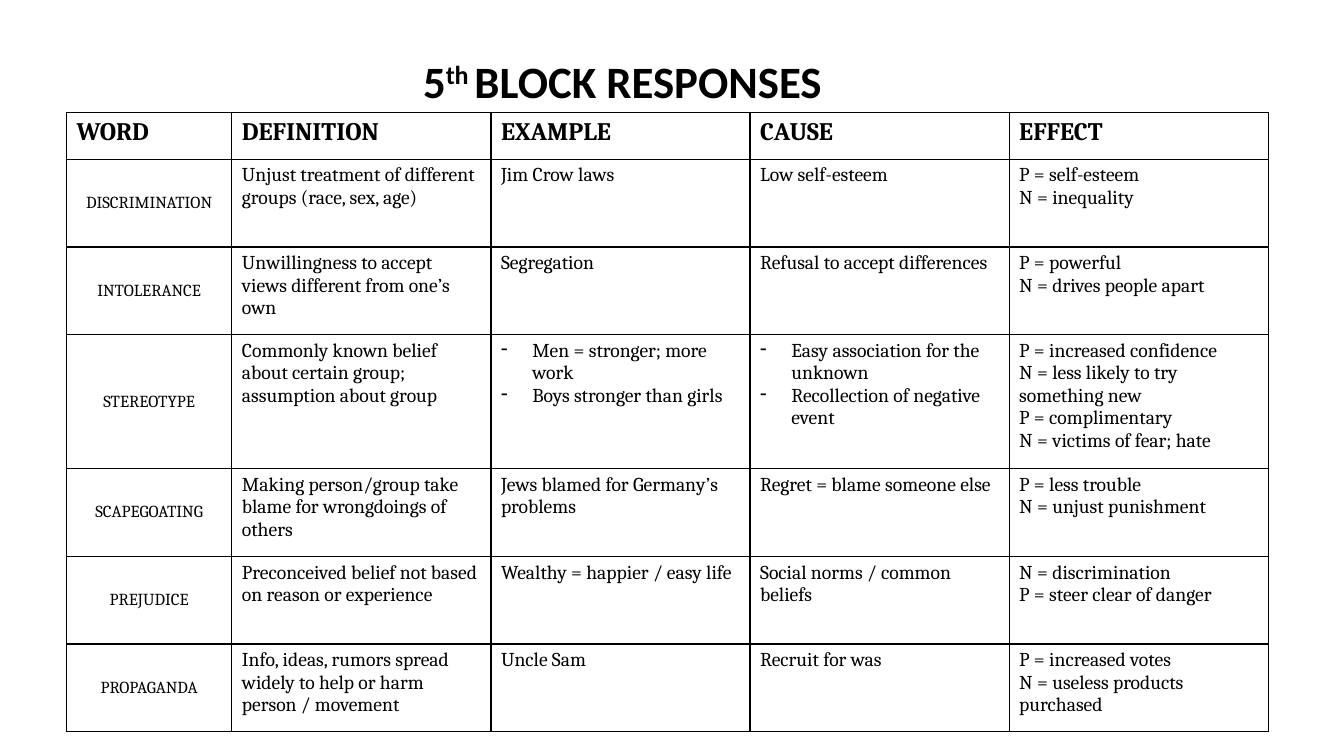
from lxml import etree
from pptx import Presentation, util as u
from pptx.dml.color import RGBColor
from pptx.enum import text
from pptx.oxml.ns import qn

TITLE = [("5", 0), ("th ", 30000), ("BLOCK RESPONSES", 0)]
HEADERS = ["WORD", "DEFINITION", "EXAMPLE", "CAUSE", "EFFECT"]
# Each line of a cell is a paragraph; a line starting with "- " is a bullet.
ROWS = [
    ["DISCRIMINATION", "Unjust treatment of different groups (race, sex, age)",
     "Jim Crow laws", "Low self-esteem", "P = self-esteem\nN = inequality"],
    ["INTOLERANCE", "Unwillingness to accept views different from one’s own",
     "Segregation", "Refusal to accept differences",
     "P = powerful\nN = drives people apart"],
    ["STEREOTYPE",
     "Commonly known belief about certain group; assumption about group",
     "- Men = stronger; more work\n- Boys stronger than girls",
     "- Easy association for the unknown\n- Recollection of negative event",
     "P = increased confidence\nN = less likely to try something new\n"
     "P = complimentary\nN = victims of fear; hate"],
    ["SCAPEGOATING", "Making person/group take blame for wrongdoings of others",
     "Jews blamed for Germany’s problems", "Regret = blame someone else",
     "P = less trouble\nN = unjust punishment"],
    ["PREJUDICE", "Preconceived belief not based on reason or experience",
     "Wealthy = happier / easy life", "Social norms / common beliefs",
     "N = discrimination\nP = steer clear of danger"],
    ["PROPAGANDA",
     "Info, ideas, rumors spread widely to help or harm person / movement",
     "Uncle Sam", "Recruit for was",
     "P = increased votes\nN = useless products purchased"],
]

BLACK = "000000"
TITLE_BOX = (3.98, 0.48, 4.39, 0.64)
TABLE_LEFT, TABLE_TOP = 0.66, 1.12
COLUMNS = [1.64] + [2.57] * 4
HEADER_HEIGHT, ROW_HEIGHT, TALL_HEIGHT = 0.46, 0.87, 1.33
HEIGHTS = [HEADER_HEIGHT] + [
    TALL_HEIGHT if row[0] == "STEREOTYPE" else ROW_HEIGHT for row in ROWS]

HEADER_FONT = {"name": "Cambria", "size": u.Pt(18), "bold": True}
WORD_FONT = {"name": "Cambria", "size": u.Pt(12), "bold": False}
BODY_FONT = {"name": "Cambria", "size": u.Pt(14), "bold": False}
TITLE_FONT = {"name": "Calibri", "size": u.Pt(32), "bold": True}


def color(value):
    return RGBColor.from_string(value)


def add_run(paragraph, words, font):
    run = paragraph.add_run()
    run.text = words
    for name, value in font.items():
        setattr(run.font, name, value)
    run.font.color.rgb = color(BLACK)
    return run


def add_dash(paragraph):
    """Give the paragraph a hanging dash bullet."""
    properties = paragraph._p.get_or_add_pPr()
    indent = u.Inches(0.31)
    properties.set("marL", str(indent))
    properties.set("indent", str(-indent))
    etree.SubElement(properties, qn("a:buChar"), char="-")


def add_borders(cell):
    properties = cell._tc.get_or_add_tcPr()
    for side in ("lnL", "lnR", "lnT", "lnB"):
        line = etree.SubElement(properties, qn("a:" + side), w=str(u.Pt(1)))
        fill = etree.SubElement(line, qn("a:solidFill"))
        etree.SubElement(fill, qn("a:srgbClr"), val=BLACK)


def fill_cell(cell, content, font, is_word):
    add_borders(cell)
    cell.fill.background()
    if is_word:
        cell.vertical_anchor = text.MSO_ANCHOR.MIDDLE
    for index, line in enumerate(content.split("\n")):
        frame = cell.text_frame
        paragraph = frame.add_paragraph() if index else frame.paragraphs[0]
        if is_word:
            paragraph.alignment = text.PP_ALIGN.CENTER
        if line.startswith("- "):
            add_dash(paragraph)
        add_run(paragraph, line.removeprefix("- "), font)


def add_title(slide):
    title = slide.shapes.title
    for name, value in zip(("left", "top", "width", "height"), TITLE_BOX):
        setattr(title, name, u.Inches(value))
    frame = title.text_frame
    frame.auto_size = text.MSO_AUTO_SIZE.NONE
    frame.vertical_anchor = text.MSO_ANCHOR.TOP
    frame.word_wrap = True
    paragraph = frame.paragraphs[0]
    paragraph.alignment = text.PP_ALIGN.CENTER
    for words, baseline in TITLE:
        run = add_run(paragraph, words, TITLE_FONT)
        if baseline:
            run._r.get_or_add_rPr().set("baseline", str(baseline))


def add_responses(slide):
    table = slide.shapes.add_table(
        len(HEIGHTS), len(COLUMNS), u.Inches(TABLE_LEFT), u.Inches(TABLE_TOP),
        u.Inches(sum(COLUMNS)), u.Inches(sum(HEIGHTS))).table
    table.first_row = table.horz_banding = False
    for column, width in zip(table.columns, COLUMNS):
        column.width = u.Inches(width)
    for row, height in zip(table.rows, HEIGHTS):
        row.height = u.Inches(height)
    for r, contents in enumerate([HEADERS] + ROWS):
        for c, content in enumerate(contents):
            is_word = r > 0 and c == 0
            font = HEADER_FONT if r == 0 else WORD_FONT if is_word else BODY_FONT
            fill_cell(table.cell(r, c), content, font, is_word)


def main():
    presentation = Presentation()
    presentation.slide_width = u.Inches(13.33)
    presentation.slide_height = u.Inches(7.5)
    slide = presentation.slides.add_slide(presentation.slide_layouts[5])
    add_title(slide)
    add_responses(slide)
    presentation.save("out.pptx")


if __name__ == "__main__":
    main()
